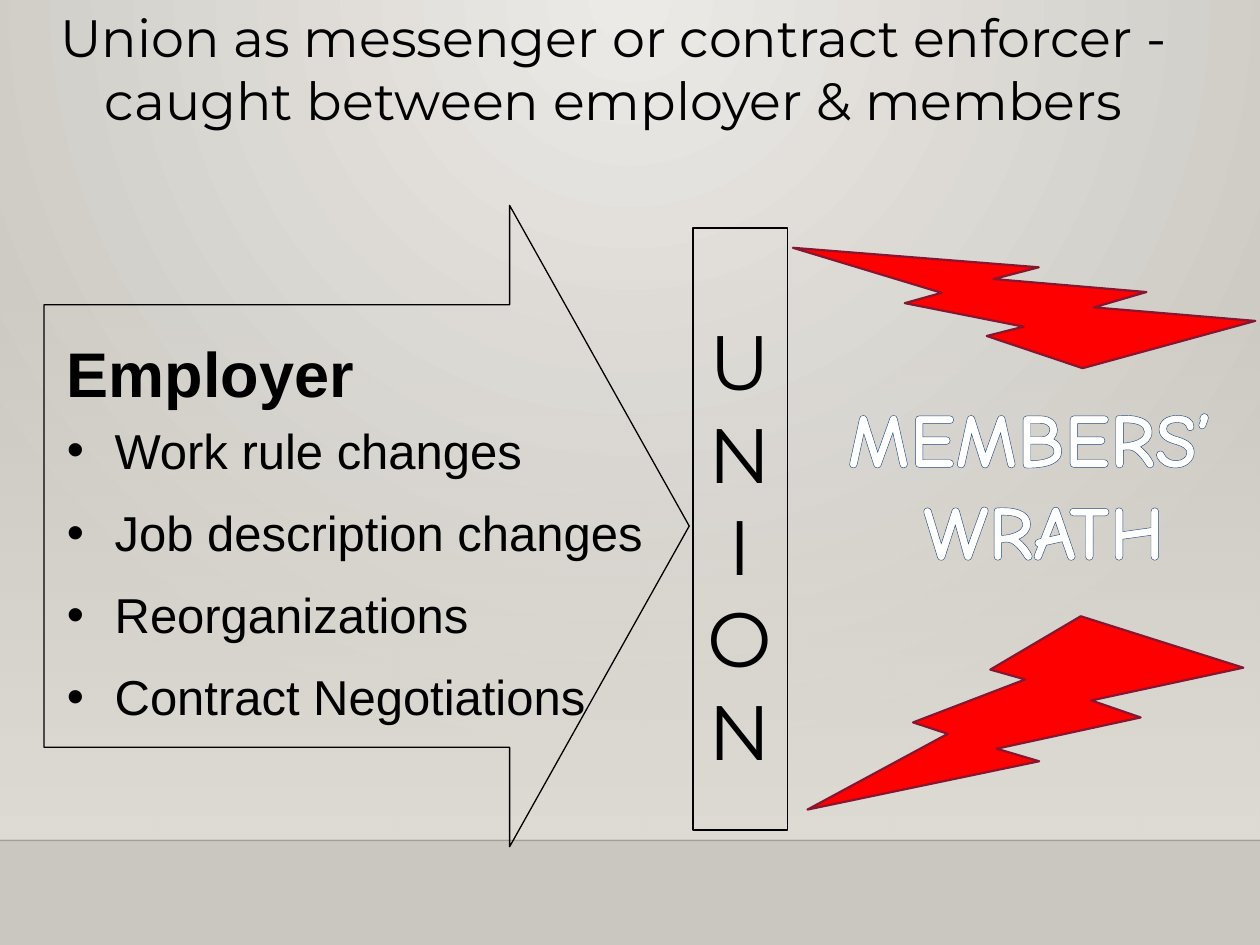
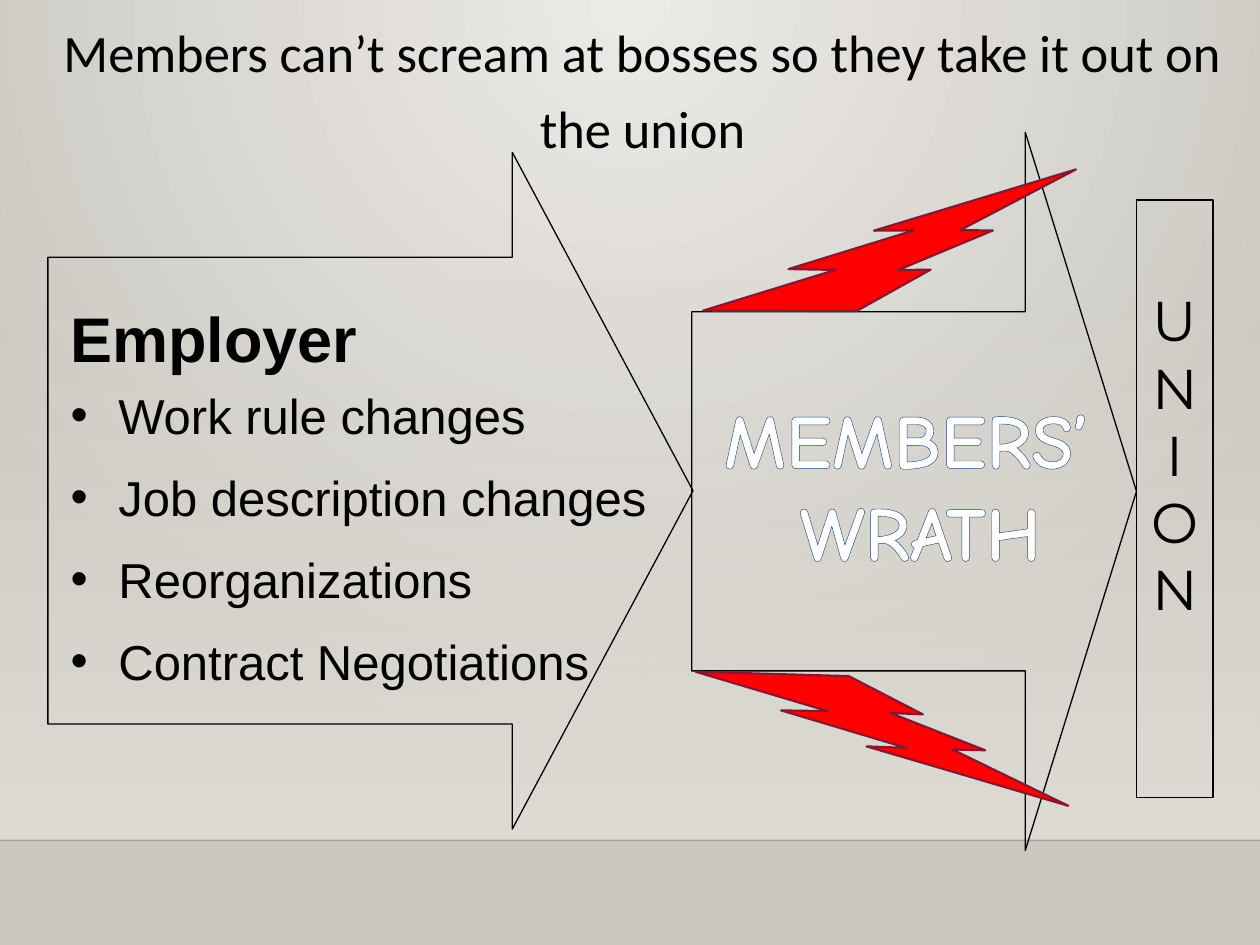
from pptx import Presentation
from pptx.dml.color import RGBColor
from pptx.enum.shapes import MSO_CONNECTOR, MSO_SHAPE
from pptx.enum.text import MSO_ANCHOR, MSO_AUTO_SIZE, PP_ALIGN
from pptx.oxml import parse_xml
from pptx.oxml.ns import nsdecls, qn
from pptx.util import Inches, Pt

BLACK, WHITE, RED = "000000", "FFFFFF", "FF0000"
BOLT_EDGE, LETTER_EDGE = "871631", "1F497D"
GLOW, GROUND, WALL = "ECEAE7", "CAC7C1", "DFDBD5"
HEADING = "Employer"
CHANGES = ["Work rule changes", "Job description changes",
           "Reorganizations", "Contract Negotiations"]


def color(value):
    return RGBColor.from_string(value)


def inches(box):
    return [Inches(length) for length in box]


def drawing(tag, content, attributes=""):
    """Return a DrawingML element."""
    return parse_xml(f"<a:{tag} {nsdecls('a')} {attributes}>{content}</a:{tag}>")


def gradient(first, last, direction, first_opacity=100):
    """Return a two-stop gradient fill; opacity is in percent."""
    return drawing("gradFill", (
        f'<a:gsLst><a:gs pos="0"><a:srgbClr val="{first}">'
        f'<a:alpha val="{first_opacity * 1000}"/></a:srgbClr></a:gs>'
        f'<a:gs pos="100000"><a:srgbClr val="{last}"/></a:gs></a:gsLst>{direction}'),
        'rotWithShape="1"')


def replace_fill(fill, parent, new_fill):
    fill.solid()
    parent.replace(parent.find(qn("a:solidFill")), new_fill)


def add_backdrop(master, page):
    """Give the master its glow, wall and floor line, built first on a page."""
    replace_fill(master.background.fill, master.element.cSld.bg.bgPr, gradient(
        GLOW, GROUND,
        '<a:path path="circle"><a:fillToRect l="43000" t="0" r="43000" b="100000"/></a:path>'))

    wall = add_outline(page, MSO_SHAPE.RECTANGLE, (0, 2.2, 10, 4.46), None, 0)
    replace_fill(wall.fill, wall.element.spPr,
                 gradient(WALL, WALL, '<a:lin ang="5400000" scaled="0"/>', 0))

    floor = page.shapes.add_connector(
        MSO_CONNECTOR.STRAIGHT, *inches((0, 6.67, 10, 6.67)))
    floor.line.width = Pt(1)
    floor.line.color.rgb = color(BLACK)
    shade = floor.element.spPr.find(".//" + qn("a:srgbClr"))
    shade.append(drawing("alpha", "", 'val="20000"'))
    floor.element.spPr.append(drawing("effectLst", ""))

    for position, shape in enumerate((wall, floor)):
        shape.element.xpath("./*/p:cNvPr")[0].set("id", str(100 + position))
        master.shapes.element.insert(2 + position, shape.element)


def add_outline(page, kind, box, line_color=BLACK, line_width=0.75):
    """Add an unfilled preset shape."""
    shape = page.shapes.add_shape(kind, *inches(box))
    shape.shadow.inherit = False
    shape.fill.background()
    if line_color is None:
        shape.line.fill.background()
    else:
        shape.line.color.rgb = color(line_color)
        shape.line.width = Pt(line_width)
    return shape


def add_arrow(page, box, shaft, head):
    arrow = add_outline(page, MSO_SHAPE.RIGHT_ARROW, box)
    arrow.adjustments[0] = shaft
    arrow.adjustments[1] = head


def add_bolt(page, box, rotation, flipped=False):
    bolt = add_outline(page, MSO_SHAPE.LIGHTNING_BOLT, box, BOLT_EDGE, 1.25)
    bolt.fill.solid()
    bolt.fill.fore_color.rgb = color(RED)
    bolt.rotation = rotation
    if flipped:
        bolt.element.spPr.find(qn("a:xfrm")).set("flipV", "1")


def set_margins(frame, side, top):
    frame.margin_left = frame.margin_right = frame.margin_bottom = Inches(side)
    frame.margin_top = Inches(top)
    frame.vertical_anchor = MSO_ANCHOR.TOP


def style_runs(para, font_name, size, font_color=BLACK, bold=False):
    for span in para.runs:
        span.font.name = font_name
        span.font.size = Pt(size)
        span.font.bold = bold
        span.font.color.rgb = color(font_color)


def set_title(page, text, box, font_name, line_spacing):
    title = page.shapes.title
    title.left, title.top, title.width, title.height = inches(box)
    frame = title.text_frame
    frame.text = text
    frame.auto_size = MSO_AUTO_SIZE.NONE
    frame.word_wrap = True
    frame.vertical_anchor = MSO_ANCHOR.TOP
    para = frame.paragraphs[0]
    para.alignment = PP_ALIGN.CENTER
    para.line_spacing = line_spacing
    style_runs(para, font_name, 30)


def add_employer(page, box):
    """Add the employer arrow and its list of changes."""
    left, top, width, height = box
    add_arrow(page, box, 0.69, 0.28)
    list_height = 3.16
    list_top = top + (height - list_height) / 2 - 0.04
    text_box = page.shapes.add_textbox(
        *inches((left + 0.14, list_top, width - 0.14, list_height)))
    frame = text_box.text_frame
    frame.word_wrap = True
    set_margins(frame, 0.04, 0.1)
    frame.text = "\n".join([HEADING, *CHANGES])
    heading, *items = frame.paragraphs
    heading.space_after = Pt(6)
    style_runs(heading, "Arial", 36, bold=True)
    for item in items:
        properties = item._p.get_or_add_pPr()
        properties.set("marL", str(Inches(0.38)))
        properties.set("indent", str(-Inches(0.38)))
        properties.append(drawing("buFont", "", 'typeface="Arial"'))
        properties.append(drawing("buChar", "", 'char="•"'))
        item.space_after = Pt(13.3)
        style_runs(item, "Arial", 28)


def add_union(page, box, size):
    """Add the tall box with one letter a line."""
    union = add_outline(page, MSO_SHAPE.RECTANGLE, box, line_width=1)
    frame = union.text_frame
    set_margins(frame, 0.04, 0.68)
    frame.text = "\n".join("UNION")
    for para in frame.paragraphs:
        para.alignment = PP_ALIGN.CENTER
        style_runs(para, "Montserrat", size)


def add_wrath(page, box):
    frame = page.shapes.add_textbox(*inches(box)).text_frame
    frame.word_wrap = False
    frame.text = "MEMBERS’ \nWRATH"
    for para in frame.paragraphs:
        para.alignment = PP_ALIGN.CENTER
        style_runs(para, "Comic Neue", 44, WHITE, bold=True)
        for span in para.runs:
            span.font._element.insert(0, drawing(
                "ln", f'<a:solidFill><a:srgbClr val="{LETTER_EDGE}"/></a:solidFill>',
                f'w="{Pt(2.25)}"'))


def build_messenger(page):
    set_title(page, "Union as messenger or contract enforcer - "
              "caught between employer & members",
              (0.16, -0.01, 9.42, 1.91), "Montserrat", 1)
    add_employer(page, (0.35, 1.63, 5.12, 5.09))
    add_union(page, (5.5, 1.81, 0.75, 4.78), 44)
    add_wrath(page, (6.44, 3.05, 3.69, 1.8))
    add_bolt(page, (6.35, 1.76, 3.58, 1.21), 173.5)
    add_bolt(page, (6.47, 4.86, 3.36, 1.7), 184.5, flipped=True)


def build_scream(page):
    set_title(page, "Members can’t scream at bosses so they take it out on the union",
              (0.39, 0.01, 9.42, 1.21), "Calibri", 1.2)
    add_employer(page, (0.38, 1.21, 5.12, 5.37))
    add_union(page, (9.02, 1.59, 0.61, 4.74), 32)
    add_arrow(page, (5.49, 1.05, 3.53, 5.7), 0.5, 0.25)
    add_wrath(page, (5.62, 3.06, 3.37, 1.67))
    add_bolt(page, (5.47, 5.41, 3.08, 0.77), 8.2)
    add_bolt(page, (5.53, 1.54, 3.08, 0.89), 352.6, flipped=True)


def main():
    deck = Presentation()
    deck.slide_width, deck.slide_height = Inches(10), Inches(7.5)
    title_only = deck.slide_layouts[5]
    pages = [deck.slides.add_slide(title_only) for _ in range(2)]
    add_backdrop(deck.slide_master, pages[0])
    for build, page in zip((build_messenger, build_scream), pages):
        build(page)
    deck.save("out.pptx")


if __name__ == "__main__":
    main()
